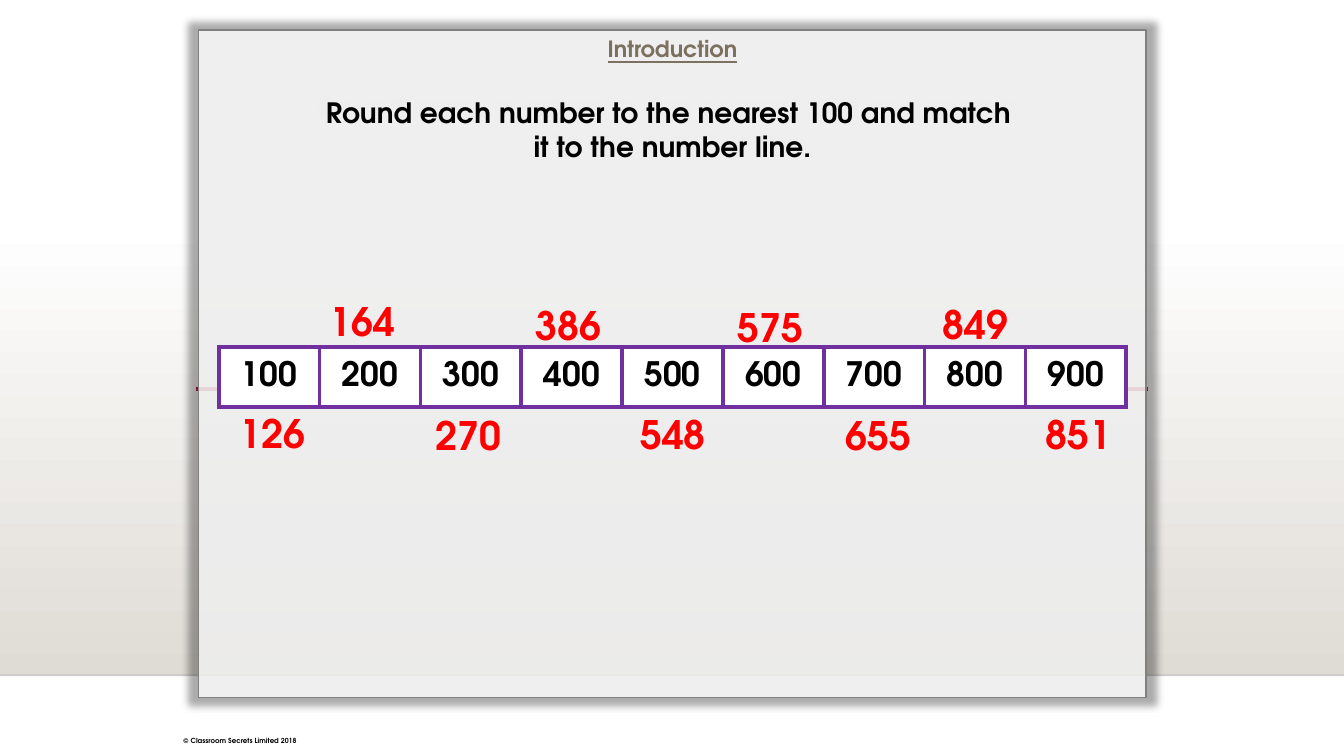
from lxml import etree
from pptx import Presentation
from pptx import util as u
from pptx.dml.color import RGBColor
from pptx.enum import shapes, text
from pptx.oxml import ns

FONT = "TeX Gyre Adventor"
HEX = {
    "white": "FFFFFF", "black": "000000", "sand": "DFDBD5", "edge": "808080",
    "wine": "B71E42", "title": "7C705E", "grid": "7030A0", "red": "FF0000",
}
# Number, left, top
ABOVE = [("164", 3.06, 2.9), ("386", 5.1, 2.94), ("575", 7.11, 2.96), ("849", 9.14, 2.93)]
BELOW = [("126", 2.17, 4.01), ("270", 4.11, 4.03), ("548", 6.14, 4.02),
         ("655", 8.18, 4.03), ("851", 10.16, 4.02)]


def color(name):
    return RGBColor.from_string(HEX[name])


def inches(*sizes):
    return [u.Inches(size) for size in sizes]


def node(parent, tag, **attrs):
    return etree.SubElement(parent, ns.qn("a:" + tag), attrs)


def paint(parent, name, alpha=100):
    """Add a solid colour, see-through when alpha is below 100."""
    tint = node(parent, "srgbClr", val=HEX[name])
    if alpha < 100:
        node(tint, "alpha", val=str(alpha * 1000))


def write(frame, lines, size, tone="black", align=text.PP_ALIGN.CENTER,
          anchor=text.MSO_ANCHOR.MIDDLE, under=False):
    frame.word_wrap = True
    frame.vertical_anchor = anchor
    for i, line in enumerate(lines):
        para = frame.paragraphs[0] if i == 0 else frame.add_paragraph()
        para.alignment = align
        run = para.add_run()
        run.text = line
        font = run.font
        font.name, font.size, font.bold = FONT, u.Pt(size), True
        font.underline = under
        font.color.rgb = color(tone)


def label(slide, words, box, size, **style):
    shape = slide.shapes.add_textbox(*inches(*box))
    write(shape.text_frame, [words], size, **style)


def rule(slide, left, right, y, tone, width, alpha=100):
    line = slide.shapes.add_connector(
        shapes.MSO_CONNECTOR.STRAIGHT, *inches(left, y, right, y))
    line.line.width = u.Pt(width)
    line.line.color.rgb = color(tone)
    if alpha < 100:
        tint = line.line.fill._xPr.find(".//" + ns.qn("a:srgbClr"))
        node(tint, "alpha", val=str(alpha * 1000))
    node(line._element.spPr, "effectLst")


def floor(slide):
    box = slide.shapes.add_shape(
        shapes.MSO_SHAPE.RECTANGLE, *inches(0, 2.21, 13.33, 4.49))
    box.shadow.inherit = False
    box.line.fill.background()
    box.fill.gradient()
    box.fill.gradient_angle = 270
    for stop, place, tone in zip(box.fill.gradient_stops, (0, 1), ("white", "sand")):
        stop.position = place
        stop.color.rgb = color(tone)


def card(slide, lines):
    box = slide.shapes.add_shape(
        shapes.MSO_SHAPE.RECTANGLE, *inches(1.97, 0.3, 9.4, 6.62))
    box.fill.solid()
    box.fill.fore_color.rgb = color("white")
    tint = box._element.spPr.find(ns.qn("a:solidFill"))[0]
    node(tint, "alpha", val="82000")
    box.line.color.rgb = color("edge")
    box.line.width = u.Pt(1.25)
    # Soft glow of shadow on every side
    box.shadow.inherit = False
    glow = node(box._element.spPr.find(ns.qn("a:effectLst")), "outerShdw",
                blurRad=str(u.Pt(5)), dist="0", dir="0", sx="102000",
                sy="102000", algn="ctr", rotWithShape="0")
    paint(glow, "black", 40)
    box.text_frame.margin_top = u.Inches(0.65)
    write(box.text_frame, lines, 20, anchor=text.MSO_ANCHOR.TOP)


def heading(slide, words):
    title = slide.shapes.title
    title.left, title.top, title.width, title.height = inches(1.97, 0.3, 9.4, 0.37)
    write(title.text_frame, [words], 16, tone="title",
          anchor=text.MSO_ANCHOR.TOP, under=True)
    # Lift the title above the card
    slide.shapes._spTree.append(title._element)


def track(slide, values):
    frame = slide.shapes.add_table(
        1, len(values), *inches(2.17, 3.44, len(values), 0.6))
    table = frame.table
    table.first_row = table.horz_banding = False
    for cell, value in zip(table.iter_cells(), values):
        cell.vertical_anchor = text.MSO_ANCHOR.MIDDLE
        write(cell.text_frame, [str(value)], 24)
        props = cell._tc.get_or_add_tcPr()
        for side in ("lnL", "lnR", "lnT", "lnB"):
            edge = node(props, side, w=str(u.Pt(3)))
            paint(node(edge, "solidFill"), "grid")
        cell.fill.solid()
        cell.fill.fore_color.rgb = color("white")


def main():
    deck = Presentation()
    deck.slide_width, deck.slide_height = inches(13.33, 7.5)
    slide = deck.slides.add_slide(deck.slide_layouts[5])

    # Backdrop
    floor(slide)
    rule(slide, 0, 13.33, 6.7, "black", 1, alpha=20)
    rule(slide, 1.94, 11.39, 3.86, "wine", 2.5)

    # Card with the task
    card(slide, ["Round each number to the nearest 100 and match ",
                 "it to the number line."])
    heading(slide, "Introduction")

    # Number line and the numbers to match
    track(slide, range(100, 1000, 100))
    for number, left, top in ABOVE + BELOW:
        label(slide, number, (left, top, 1.07, 0.57), 28, tone="red")

    # Footer
    label(slide, "© Classroom Secrets Limited 2018", (1.72, 7.26, 1.38, 0.18), 5,
          align=text.PP_ALIGN.LEFT, anchor=text.MSO_ANCHOR.TOP)
    deck.save("out.pptx")


if __name__ == "__main__":
    main()
